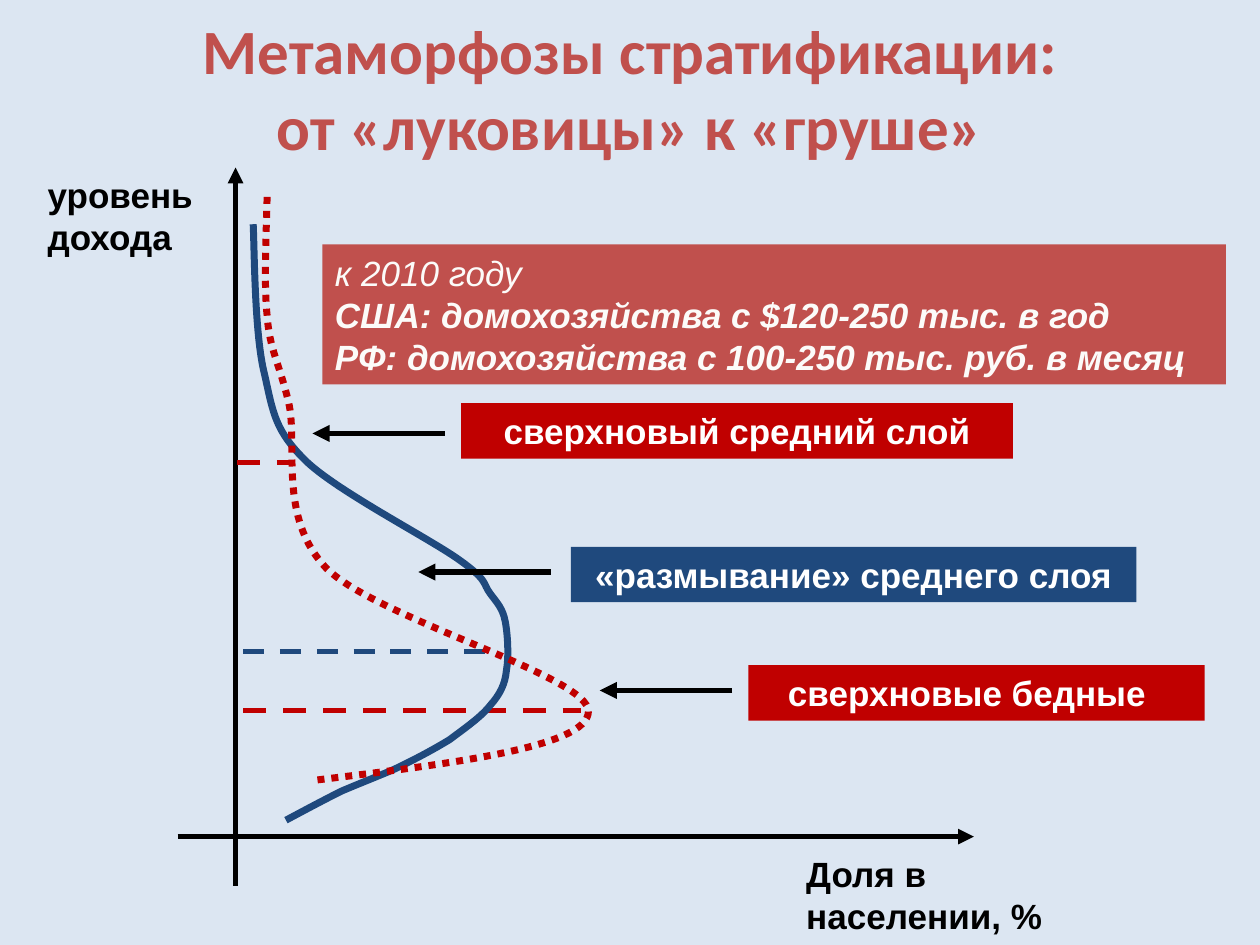
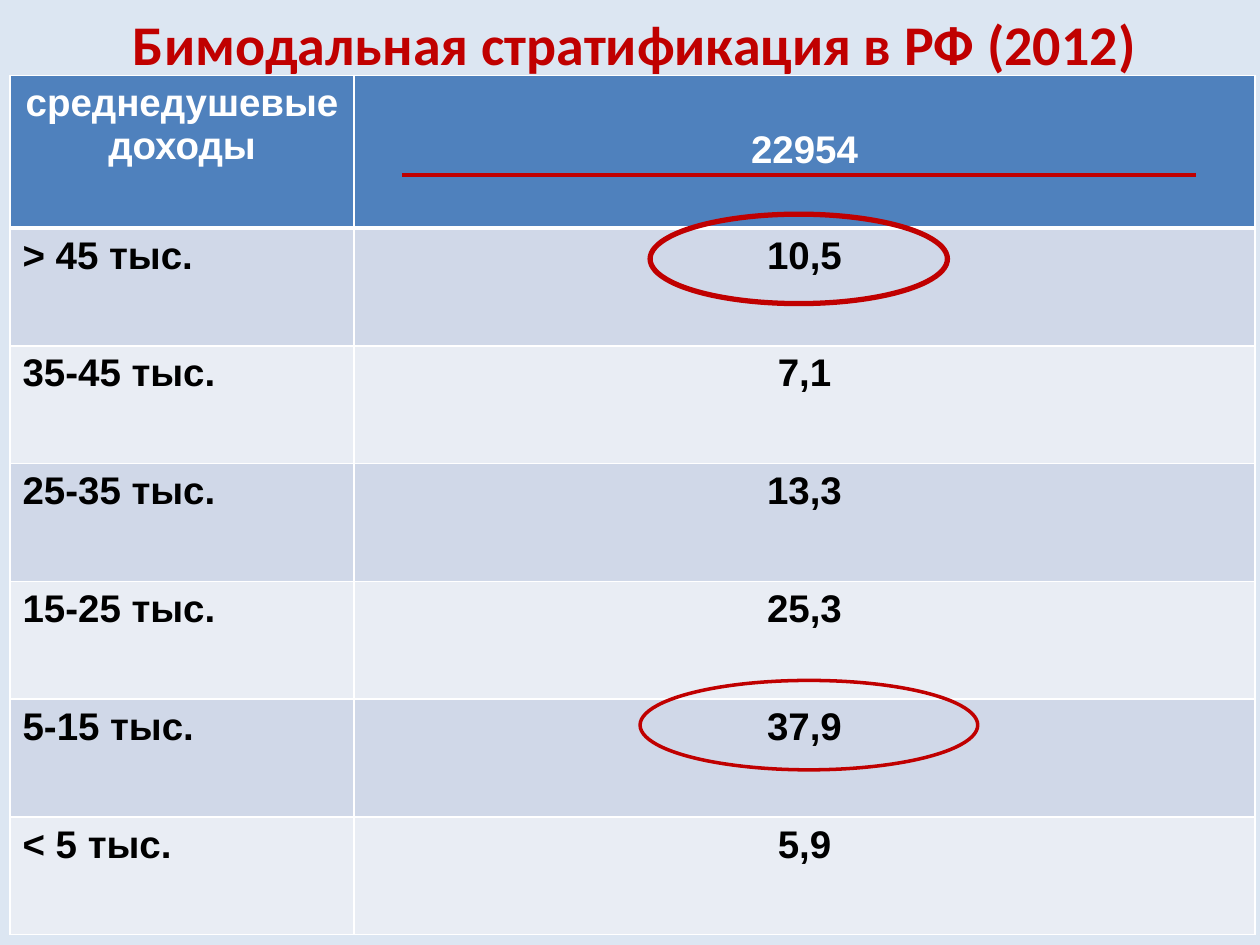
import lxml.etree
import pptx
import pptx.dml.color
import pptx.enum.dml
import pptx.enum.shapes
import pptx.enum.text
import pptx.oxml.ns
import pptx.util

RGBColor = pptx.dml.color.RGBColor
Pt = pptx.util.Pt
qn = pptx.oxml.ns.qn
ALIGN = pptx.enum.text.PP_ALIGN
DASH = pptx.enum.dml.MSO_LINE
SHAPE = pptx.enum.shapes.MSO_SHAPE

PALE_BLUE = RGBColor(0xDC, 0xE6, 0xF2)
BRICK = RGBColor(0xC0, 0x50, 0x4D)
RED = RGBColor(0xC0, 0x00, 0x00)
NAVY = RGBColor(0x1F, 0x49, 0x7D)
BLACK = RGBColor(0, 0, 0)
WHITE = RGBColor(0xFF, 0xFF, 0xFF)
CREAM = RGBColor(0xFC, 0xFB, 0xF9)
HEADER_BLUE = RGBColor(0x4F, 0x81, 0xBD)
BANDS = (RGBColor(0xD0, 0xD8, 0xE8), RGBColor(0xE9, 0xED, 0xF4))

TITLE_FONT, BODY_FONT = "Calibri", "Arial"
COLUMNS, ROWS = 10, 7.5
UNIT = pptx.util.Inches(1)  # one grid column or row

# Start point, then two control points and an end point for each arc.
ONION_CURVE = [
    (2.27, 6.51), (2.42, 6.43), (2.57, 6.35), (2.71, 6.28),
    (2.85, 6.22), (2.98, 6.17), (3.12, 6.11),
    (3.27, 6.04), (3.44, 5.95), (3.57, 5.87),
    (3.69, 5.78), (3.82, 5.69), (3.89, 5.6),
    (3.97, 5.51), (4.01, 5.43), (4.02, 5.32),
    (4.04, 5.21), (4.03, 5.03), (4.01, 4.93),
    (3.99, 4.83), (3.95, 4.79), (3.89, 4.71),
    (3.83, 4.63), (3.88, 4.61), (3.64, 4.44),
    (3.4, 4.27), (2.7, 3.91), (2.44, 3.67),
    (2.18, 3.42), (2.17, 3.28), (2.1, 2.97),
    (2.02, 2.66), (2.02, 1.98), (2.01, 1.78),
]
PEAR_CURVE = [
    (2.52, 6.19), (3.59, 6.06), (4.66, 5.93), (4.67, 5.65),
    (4.69, 5.37), (2.99, 4.91), (2.59, 4.51),
    (2.2, 4.1), (2.37, 3.53), (2.29, 3.19),
    (2.21, 2.86), (2.14, 2.78), (2.12, 2.5),
    (2.09, 2.23), (2.12, 1.71), (2.12, 1.55),
]
INCOME_SHARES = [
    ("> 45 тыс.", "10,5"), ("35-45 тыс.", "7,1"), ("25-35 тыс.", "13,3"),
    ("15-25 тыс.", "25,3"), ("5-15 тыс.", "37,9"), ("< 5 тыс.", "5,9"),
]


def grid(*lengths):
    return [round(length * UNIT) for length in lengths]


def style(paragraph, size, color, bold=True, italic=False,
          align=ALIGN.LEFT, font=BODY_FONT):
    paragraph.alignment = align
    paragraph.font.name = font
    paragraph.font.size = Pt(size)
    paragraph.font.bold = bold
    paragraph.font.italic = italic
    paragraph.font.color.rgb = color


def set_line(line, color, width, dash=None):
    line.color.rgb = color
    line.width = Pt(width)
    if dash:
        line.dash_style = dash


def titled_slide(deck, title, width, height, size, color):
    slide = deck.slides.add_slide(deck.slide_layouts[5])
    heading = slide.shapes.title
    heading.left, heading.top, heading.width, heading.height = grid(0, 0, width, height)
    frame = heading.text_frame
    frame.text = title
    frame.vertical_anchor = pptx.enum.text.MSO_ANCHOR.MIDDLE
    style(frame.paragraphs[0], size, color, align=ALIGN.CENTER, font=TITLE_FONT)
    return slide


def add_line(slide, start, end, color, width, dash=None, arrow=False):
    line = slide.shapes.add_connector(
        pptx.enum.shapes.MSO_CONNECTOR.STRAIGHT, *grid(*start, *end))
    set_line(line.line, color, width, dash)
    if arrow:
        outline = line._element.spPr.find(qn("a:ln"))
        lxml.etree.SubElement(outline, qn("a:tailEnd"), type="triangle")
    lxml.etree.SubElement(line._element.spPr, qn("a:effectLst"))


def add_axis_name(slide, text, *box):
    frame = slide.shapes.add_textbox(*grid(*box)).text_frame
    frame.word_wrap = True
    frame.text = text
    style(frame.paragraphs[0], 20, BLACK)


def add_panel(slide, fill, *box):
    """Add a borderless filled rectangle and return its text frame."""
    panel = slide.shapes.add_shape(SHAPE.RECTANGLE, *grid(*box))
    panel.shadow.inherit = False
    panel.fill.solid()
    panel.fill.fore_color.rgb = fill
    panel.line.fill.background()
    panel.text_frame.word_wrap = True
    return panel.text_frame


def add_callout(slide, text, fill, left, top, width, arrow_tip, right_inset=0.1):
    """Add a label and the arrow that points left from it."""
    tip_x, tip_y = arrow_tip
    add_line(slide, (tip_x + 1.05, tip_y), arrow_tip, BLACK, 3.25, arrow=True)
    frame = add_panel(slide, fill, left, top, width, 0.44)
    frame.margin_right = grid(right_inset)[0]
    frame.text = text
    style(frame.paragraphs[0], 20, WHITE, align=ALIGN.CENTER)


def add_curve(slide, knots, color, dash=None):
    """Add an open freeform and turn each three segments into one Bezier arc."""
    start, *rest = [grid(*knot) for knot in knots]
    builder = slide.shapes.build_freeform(*start)
    builder.add_line_segments(rest, close=False)
    curve = builder.convert_to_shape()
    segments = list(curve._element.iter(qn("a:lnTo")))
    for first in range(0, len(segments), 3):
        arc = lxml.etree.Element(qn("a:cubicBezTo"))
        segments[first].addprevious(arc)
        for segment in segments[first:first + 3]:
            arc.append(segment[0])
            segment.getparent().remove(segment)
    curve.shadow.inherit = False
    curve.fill.background()
    set_line(curve.line, color, 4, dash)


def add_ring(slide, width, *box):
    ring = slide.shapes.add_shape(SHAPE.OVAL, *grid(*box))
    ring.shadow.inherit = False
    ring.fill.background()
    set_line(ring.line, RED, width)


def set_borders(cell, top, bottom):
    properties = cell._tc.get_or_add_tcPr()
    widths = {"a:lnL": 1, "a:lnR": 1, "a:lnT": top, "a:lnB": bottom}
    for index, (side, width) in enumerate(widths.items()):
        border = lxml.etree.Element(qn(side), w=str(Pt(width)))
        fill = lxml.etree.SubElement(border, qn("a:solidFill"))
        lxml.etree.SubElement(fill, qn("a:srgbClr"), val=str(WHITE))
        properties.insert(index, border)


def fill_cell(cell, text, fill, color, align, top=1, bottom=1):
    cell.text = text
    cell.fill.solid()
    cell.fill.fore_color.rgb = fill
    set_borders(cell, top, bottom)
    for paragraph in cell.text_frame.paragraphs:
        style(paragraph, 22, color, align=align)


def add_income_table(slide):
    header_height, row_height = 1.21, 0.935
    column_widths = (2.73, 7.15)
    table = slide.shapes.add_table(
        len(INCOME_SHARES) + 1, 2,
        *grid(0.08, 0.6, sum(column_widths),
              header_height + row_height * len(INCOME_SHARES))).table
    for column, width in zip(table.columns, grid(*column_widths)):
        column.width = width
    for row in table.rows:
        row.height = grid(row_height)[0]
    table.rows[0].height = grid(header_height)[0]

    for column, heading in enumerate(("среднедушевые\nдоходы", "22954")):
        fill_cell(table.cell(0, column), heading, HEADER_BLUE, WHITE,
                  ALIGN.CENTER, bottom=3)
    table.cell(0, 1).margin_top = grid(0.42)[0]
    for row, values in enumerate(INCOME_SHARES, start=1):
        for column, align in enumerate((ALIGN.LEFT, ALIGN.CENTER)):
            fill_cell(table.cell(row, column), values[column], BANDS[(row - 1) % 2],
                      BLACK, align, top=3 if row == 1 else 1)


def build_metamorphoses(deck):
    slide = titled_slide(deck, "Метаморфозы стратификации:\vот «луковицы» к «груше»",
                         COLUMNS, 1.39, 36, BRICK)
    add_line(slide, (1.93, 5.17), (3.9, 5.17), NAVY, 3, DASH.DASH)
    add_axis_name(slide, "уровень дохода", 0.28, 1.33, 1.52, 0.77)
    add_axis_name(slide, "Доля в населении, %", 6.3, 6.72, 2.21, 0.77)
    add_line(slide, (1.93, 5.64), (4.61, 5.64), RED, 3.25, DASH.DASH)
    add_line(slide, (1.41, 6.64), (7.73, 6.64), BLACK, 3, arrow=True)
    add_line(slide, (1.87, 7.03), (1.87, 1.33), BLACK, 3, arrow=True)
    add_line(slide, (1.88, 3.67), (2.32, 3.67), RED, 3.25, DASH.DASH)
    add_curve(slide, ONION_CURVE, NAVY)

    households = add_panel(slide, BRICK, 2.56, 1.94, 7.17, 1.11)
    households.text = ("к 2010 году\n"
                       "США: домохозяйства с $120-250 тыс. в год\n"
                       "РФ: домохозяйства с 100-250 тыс. руб. в месяц")
    for index, paragraph in enumerate(households.paragraphs):
        style(paragraph, 20, CREAM, bold=index > 0, italic=True)

    add_curve(slide, PEAR_CURVE, RED, DASH.ROUND_DOT)
    add_callout(slide, "сверхновый средний слой", RED, 3.66, 3.2, 4.38, (2.48, 3.44))
    add_callout(slide, "«размывание» среднего слоя", NAVY, 4.53, 4.34, 4.49, (3.32, 4.54))
    add_callout(slide, "сверхновые бедные", RED, 5.94, 5.28, 3.62, (4.76, 5.48),
                right_inset=0.25)


def build_bimodal(deck):
    slide = titled_slide(deck, "Бимодальная стратификация в РФ (2012)",
                         10.08, 0.68, 32, RED)
    add_income_table(slide)
    add_ring(slide, 2, 5.08, 5.4, 2.68, 0.71)
    add_ring(slide, 3, 5.16, 1.7, 2.36, 0.71)
    add_line(slide, (3.19, 1.39), (9.49, 1.39), RED, 2.5)


def main():
    deck = pptx.Presentation()
    deck.slide_width, deck.slide_height = grid(COLUMNS, ROWS)
    background = deck.slide_master.background.fill
    background.solid()
    background.fore_color.rgb = PALE_BLUE
    build_metamorphoses(deck)
    build_bimodal(deck)
    deck.save("out.pptx")


if __name__ == "__main__":
    main()
